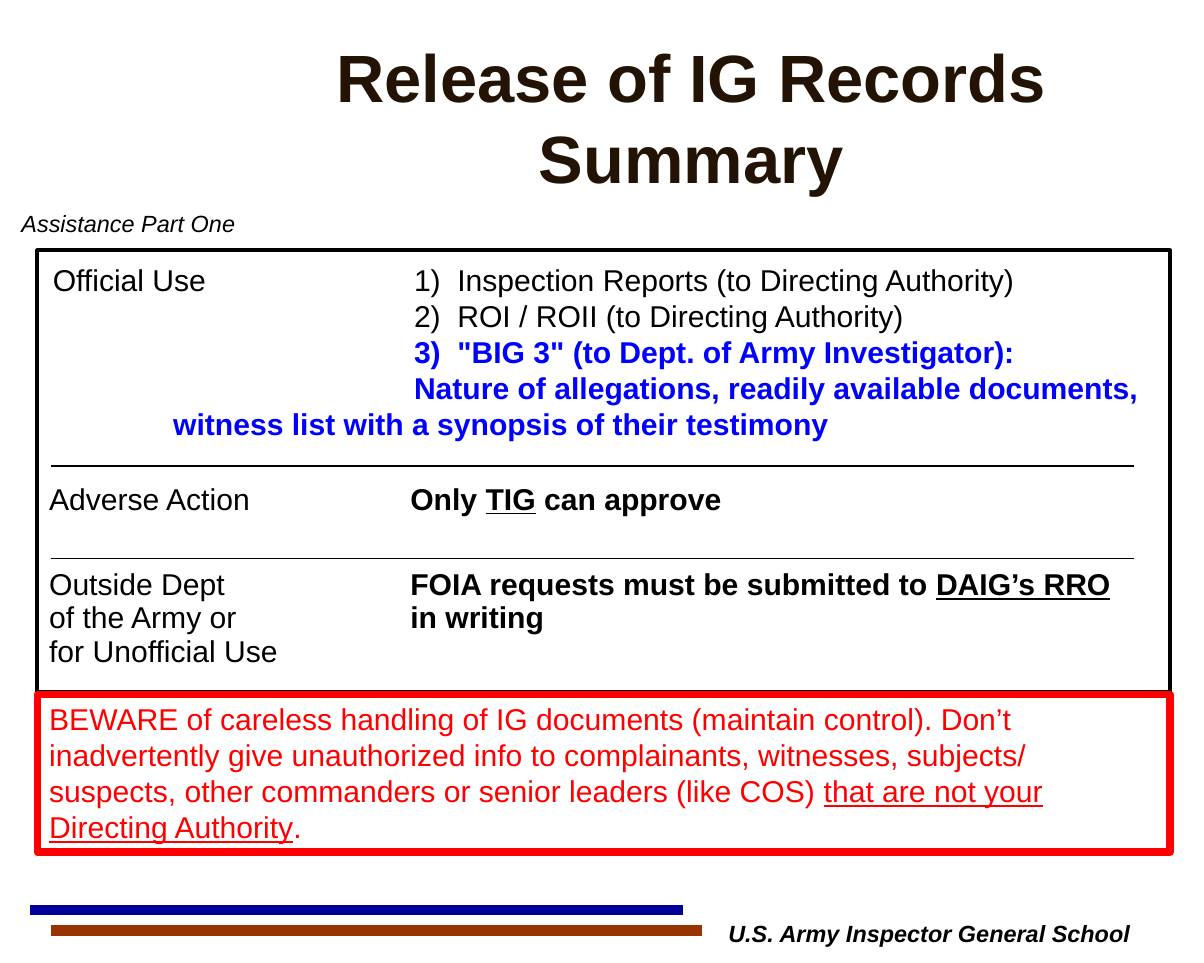
import pptx
import pptx.util
import pptx.oxml
import pptx.oxml.ns
from pptx.dml.color import RGBColor
from pptx.enum.shapes import MSO_CONNECTOR, MSO_SHAPE
from pptx.enum.text import MSO_ANCHOR, PP_ALIGN
from pptx.util import Inches, Pt

BLACK = RGBColor(0x00, 0x00, 0x00)
RED = RGBColor(0xFF, 0x00, 0x00)
BLUE = RGBColor(0x00, 0x00, 0xFF)
NAVY = RGBColor(0x00, 0x00, 0x99)
RUST = RGBColor(0x99, 0x33, 0x00)
BROWN = RGBColor(0x22, 0x13, 0x04)

# A paragraph is a list of (text, style) runs: b is bold, u is underlined.
TITLE = [[("Release of IG Records", "")], [("Summary", "")]]
SECTION = [[("Assistance Part One", "")]]
SCHOOL = [[("U.S. Army Inspector General School", "")]]
OFFICIAL_USE = [
    [("Official Use\t1)\tInspection Reports (to Directing Authority)", "")],
    [("\t2)\tROI / ROII (to Directing Authority)", "")],
    [("\t3)\t\"BIG 3\" (to Dept. of Army Investigator):", "b")],
    [("Nature of allegations, readily available documents, "
      "witness list with a synopsis of their testimony", "b")],
]
ADVERSE_ACTION = [
    [("Adverse Action\t", ""), ("Only ", "b"), ("TIG", "bu"), (" can approve", "b")],
]
OUTSIDE_ARMY = [
    [("Outside Dept\t", ""), ("FOIA requests must be submitted to ", "b"),
     ("DAIG’s RRO", "bu")],
    [("of the Army or\t", ""), ("in writing", "b")],
    [("for Unofficial Use", "")],
]
WARNING = [
    [("BEWARE of careless handling of IG documents (maintain control). Don’t "
      "inadvertently give unauthorized info to complainants, witnesses, subjects/ "
      "suspects, other commanders or senior leaders (like COS) ", ""),
     ("that are not your Directing Authority", "u"), (".", "")],
]
# start x, y, end x, colour, width
RULES = [
    (0.25, 7.56, 5.67, NAVY, 6),
    (0.42, 7.73, 5.83, RUST, 6),
    (0.42, 3.87, 9.42, BLACK, 1),
    (0.42, 4.64, 9.42, BLACK, 1),
]
DETAIL_TABS = (3, 3.36)
LEADING = 1.2

presentation = pptx.Presentation()
presentation.slide_width, presentation.slide_height = Inches(10), Inches(8)
slide = presentation.slides.add_slide(presentation.slide_layouts[6])


def add_tabs(paragraph, stops):
    properties = paragraph._p.get_or_add_pPr()
    tab_list = pptx.oxml.ns.qn("a:tabLst")
    tab_list = properties.makeelement(tab_list, {})
    for stop in stops:
        tab = tab_list.makeelement(
            pptx.oxml.ns.qn("a:tab"), {"pos": str(Inches(stop)), "algn": "l"})
        tab_list.append(tab)
    properties.append(tab_list)


def write(frame, paragraphs, size=18, color=BLACK, leading=None,
          align=PP_ALIGN.LEFT, tabs=(), bold=None, italic=None):
    """Fill a text frame and return its paragraphs."""
    frame.word_wrap = True
    frame.vertical_anchor = MSO_ANCHOR.TOP
    for index, runs in enumerate(paragraphs):
        paragraph = frame.add_paragraph() if index else frame.paragraphs[0]
        if tabs:
            add_tabs(paragraph, tabs)
        paragraph.alignment = align
        paragraph.line_spacing = Pt(leading or size * LEADING)
        font = paragraph.font
        font.name, font.size = "Arial", Pt(size)
        font.bold, font.italic = bold, italic
        font.color.rgb = color
        for text, style in runs:
            run = paragraph.add_run()
            run.text = text
            if "b" in style:
                run.font.bold = True
            if "u" in style:
                run.font.underline = True
    return frame.paragraphs


def add_text(box, paragraphs, **style):
    frame = slide.shapes.add_textbox(*map(Inches, box)).text_frame
    return write(frame, paragraphs, **style)


def add_frame(box, color, width):
    """Draw an unfilled rectangle."""
    frame = slide.shapes.add_shape(MSO_SHAPE.RECTANGLE, *map(Inches, box))
    frame.shadow.inherit = False
    frame.fill.background()
    frame.line.color.rgb = color
    frame.line.width = Pt(width)
    return frame


for left, y, right, color, width in RULES:
    rule = slide.shapes.add_connector(
        MSO_CONNECTOR.STRAIGHT, Inches(left), Inches(y), Inches(right), Inches(y))
    rule.line.color.rgb = color
    rule.line.width = Pt(width)
    properties = rule._element.spPr
    properties.append(properties.makeelement(pptx.oxml.ns.qn("a:effectLst"), {}))

add_text((1.49, 0.25, 8.5, 1.39), TITLE, size=40, color=BROWN,
         align=PP_ALIGN.CENTER, bold=True)
add_text((0.08, 1.69, 4.5, 0.53), SECTION, size=14, italic=True)
add_text((5.47, 7.59, 4.5, 0.4), SCHOOL, size=14, align=PP_ALIGN.CENTER,
         bold=True, italic=True)

add_frame((0.31, 2.08, 9.41, 3.67), BLACK, 2.25)
official = add_text((0.34, 2.12, 9.38, 1.62), OFFICIAL_USE, tabs=DETAIL_TABS)
for paragraph in official[2:]:
    paragraph.font.color.rgb = BLUE
hanging = official[3]._p.get_or_add_pPr()
hanging.set("marL", str(Inches(1)))
hanging.set("indent", str(Inches(2)))
add_text((0.31, 3.94, 9.33, 0.4), ADVERSE_ACTION, tabs=DETAIL_TABS)
add_text((0.31, 4.67, 9.41, 0.94), OUTSIDE_ARMY, leading=20, tabs=DETAIL_TABS)

warning = add_frame((0.31, 5.77, 9.41, 1.31), RED, 4.5)
write(warning.text_frame, WARNING, color=RED)

presentation.save("out.pptx")
